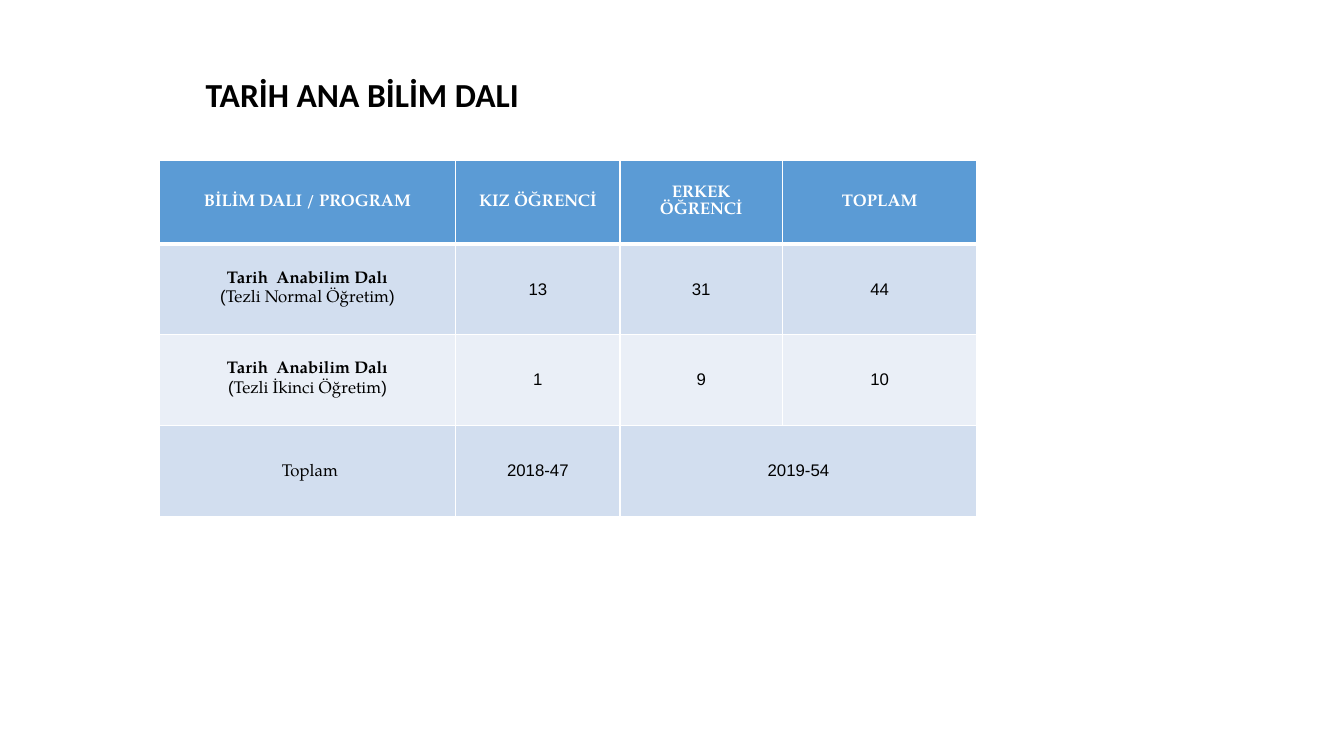
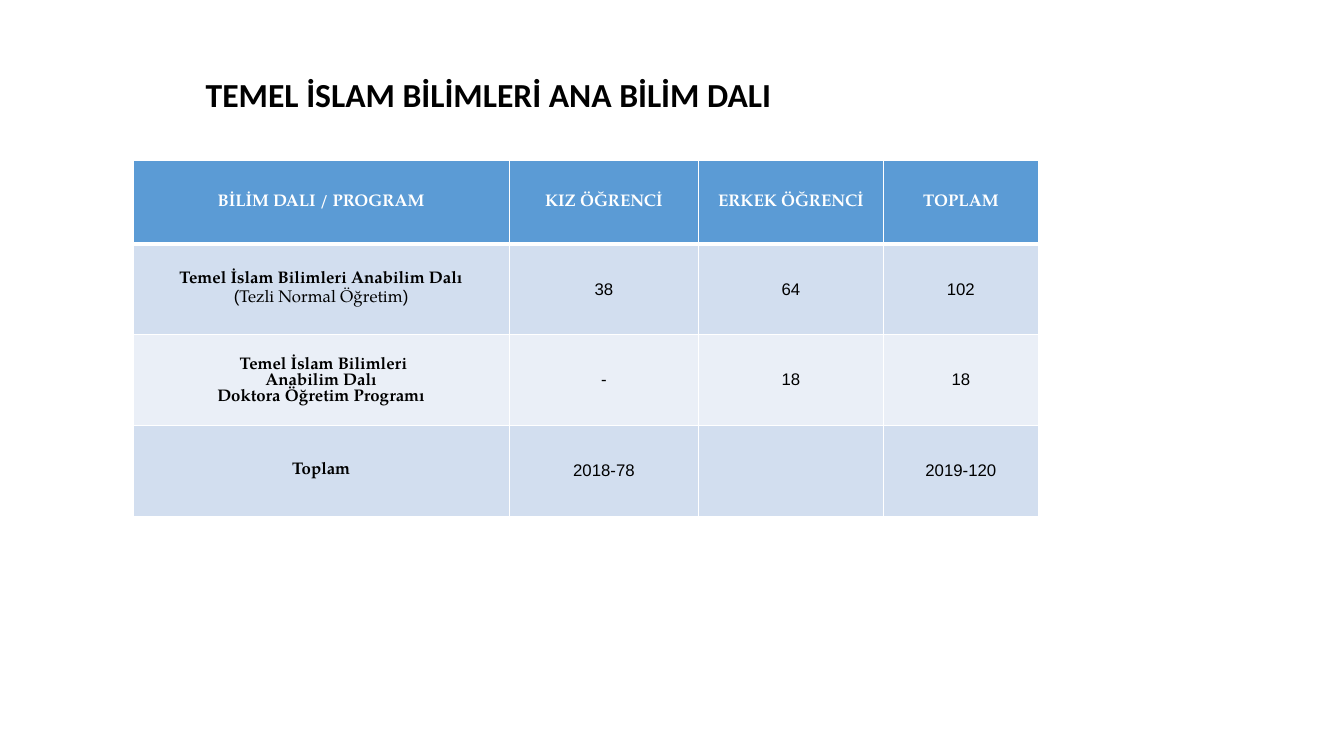
from lxml import etree
from pptx import Presentation
from pptx import util as u
from pptx.dml.color import RGBColor
from pptx.enum import text
from pptx.oxml import ns

WHITE = RGBColor(0xFF, 0xFF, 0xFF)
BLACK = RGBColor(0x00, 0x00, 0x00)
HEADER_BLUE = RGBColor(0x5B, 0x9B, 0xD5)
BANDS = (RGBColor(0xEA, 0xEF, 0xF7), RGBColor(0xD2, 0xDE, 0xEF))
TITLE_FONT, TABLE_FONT, DIGIT_FONT = "Calibri", "TeX Gyre Pagella", "Arial"
SLIDE_WIDTH, SLIDE_HEIGHT = u.Inches(13.33), u.Inches(7.5)
TITLE_BOX = (1.94, 0.68, 7.4, 0.91)
TABLE_TOP = 1.59
ROW_HEIGHTS = (0.83, 0.9, 0.9, 0.9)
HEADINGS = ("BİLİM DALI / PROGRAM", "KIZ ÖĞRENCİ", "ERKEK ÖĞRENCİ", "TOPLAM")


def add_title(slide, title):
    """Place and format the slide title."""
    shape = slide.shapes.title
    shape.left, shape.top, shape.width, shape.height = map(u.Inches, TITLE_BOX)
    frame = shape.text_frame
    frame.text = title
    frame.word_wrap = True
    frame.auto_size = text.MSO_AUTO_SIZE.NONE
    frame.vertical_anchor = text.MSO_ANCHOR.TOP
    paragraph = frame.paragraphs[0]
    paragraph.alignment = text.PP_ALIGN.LEFT
    font = paragraph.runs[0].font
    font.name, font.size, font.bold = TITLE_FONT, u.Pt(24), True
    font.color.rgb = BLACK


def add_border(cell, side, points):
    """Draw a white line on one side of a cell."""
    line = etree.SubElement(cell._tc.get_or_add_tcPr(), ns.qn(f"a:ln{side}"), w=str(u.Pt(points)))
    fill = etree.SubElement(line, ns.qn("a:solidFill"))
    etree.SubElement(fill, ns.qn("a:srgbClr"), val=str(WHITE))


def format_paragraph(paragraph, bold, color, right_to_left):
    """Centre a table paragraph and format its runs."""
    paragraph.alignment = text.PP_ALIGN.CENTER
    paragraph.line_spacing = 1.0
    if right_to_left:
        paragraph._p.get_or_add_pPr().set("rtl", "1")
    for run in paragraph.runs:
        font = run.font
        font.name, font.size, font.bold = TABLE_FONT, u.Pt(12), bold
        font.color.rgb = color
        etree.SubElement(run._r.get_or_add_rPr(), ns.qn("a:cs"), typeface=DIGIT_FONT)


def fill_cell(cell, row, column, lines, bold_lines):
    """Write the lines of a cell and style it by its row."""
    header = row == 0
    cell.margin_left = cell.margin_right = u.Inches(0.15)
    cell.margin_top = cell.margin_bottom = u.Inches(0.05)
    cell.vertical_anchor = text.MSO_ANCHOR.MIDDLE
    for side, points in (("L", 1), ("R", 1), ("T", 3 if row == 1 else 1), ("B", 3 if header else 1)):
        add_border(cell, side, points)
    cell.fill.solid()
    cell.fill.fore_color.rgb = HEADER_BLUE if header else BANDS[row % 2]
    cell.text_frame.text = lines
    for index, paragraph in enumerate(cell.text_frame.paragraphs):
        format_paragraph(paragraph, index < bold_lines, WHITE if header else BLACK,
                         not header or column > 0)


def add_student_table(slide, left, widths, rows):
    """Add a student table; each row gives its bold label lines and its cells."""
    records = [(1, HEADINGS), *rows]
    frame = slide.shapes.add_table(len(records), len(widths), u.Inches(left), u.Inches(TABLE_TOP),
                                   u.Inches(sum(widths)), u.Inches(sum(ROW_HEIGHTS)))
    table = frame.table
    for column, width in zip(table.columns, widths):
        column.width = u.Inches(width)
    for row, height in zip(table.rows, ROW_HEIGHTS):
        row.height = u.Inches(height)
    for row, (bold_lines, values) in enumerate(records):
        for column, value in enumerate(values):
            bold = bold_lines if row == 0 or column == 0 else 0
            fill_cell(table.cell(row, column), row, column, value, bold)
    return table


def add_department(presentation, title, left, widths, rows):
    """Add a department slide and return its table."""
    slide = presentation.slides.add_slide(presentation.slide_layouts[5])
    add_title(slide, title)
    return add_student_table(slide, left, widths, rows)


def main():
    """Build and save the presentation."""
    presentation = Presentation()
    presentation.slide_width, presentation.slide_height = SLIDE_WIDTH, SLIDE_HEIGHT
    history = add_department(
        presentation, "TARİH ANA BİLİM DALI", 1.58, (2.94, 1.63, 1.61, 1.93),
        [(1, ("Tarih  Anabilim Dalı\n(Tezli Normal Öğretim)", "13", "31", "44")),
         (1, ("Tarih  Anabilim Dalı\n(Tezli İkinci Öğretim)", "1", "9", "10")),
         (0, ("Toplam ", "2018-47", "2019-54", ""))])
    history.cell(3, 2).merge(history.cell(3, 3))
    add_department(
        presentation, "TEMEL İSLAM BİLİMLERİ ANA BİLİM DALI", 1.32, (3.73, 1.88, 1.83, 1.54),
        [(1, ("Temel İslam Bilimleri Anabilim Dalı\n(Tezli Normal Öğretim)", "38", "64", "102")),
         (3, ("Temel İslam Bilimleri \nAnabilim Dalı\nDoktora Öğretim Programı", "-", "18", "18")),
         (1, ("Toplam", "2018-78", "", "2019-120"))])
    presentation.save("out.pptx")


if __name__ == "__main__":
    main()
